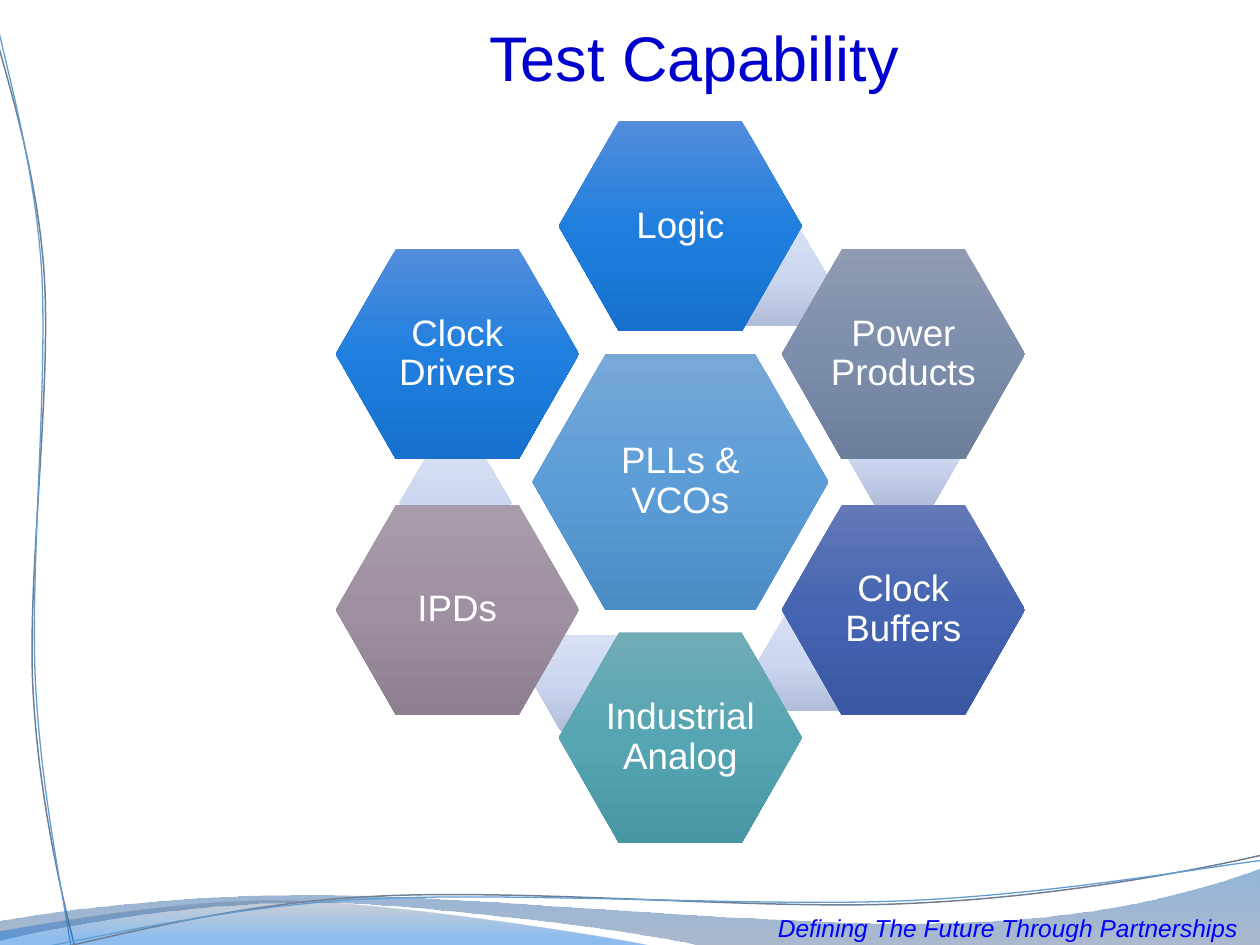
"""Build the Test Capability slide: a ring of hexagons above a waved footer."""
from lxml import etree
from pptx import Presentation, util as u
from pptx.dml.color import RGBColor
from pptx.enum import shapes, text
from pptx.oxml import ns

WHITE = RGBColor(0xFF, 0xFF, 0xFF)
TITLE_BLUE = RGBColor(0x00, 0x00, 0xCC)
FOOTER_BLUE = RGBColor(0x00, 0x00, 0xFF)
SLATE = RGBColor(0x70, 0x7E, 0x95)
SKY = RGBColor(0x62, 0x9D, 0xD1)
WAVE_TOP, WAVE_LOW = RGBColor(0x12, 0x5E, 0xAA), RGBColor(0x69, 0x7F, 0xA4)
CREST_TOP, CREST_LOW = RGBColor(0x59, 0x69, 0x82), RGBColor(0x06, 0x70, 0xDA)
PALE = [RGBColor(0xD6, 0xDF, 0xF3), RGBColor(0xCB, 0xD7, 0xF1), RGBColor(0xB2, 0xBE, 0xD9)]
AZURE = [RGBColor(0x53, 0x8D, 0xDC), RGBColor(0x20, 0x7F, 0xDE), RGBColor(0x15, 0x71, 0xCD)]
LIGHT = [RGBColor(0x77, 0xA8, 0xD7), RGBColor(0x5C, 0x9D, 0xD7), RGBColor(0x4C, 0x8C, 0xC5)]
STEEL = [RGBColor(0x8E, 0x9B, 0xB2), RGBColor(0x7D, 0x8E, 0xAB), RGBColor(0x6D, 0x7E, 0x9A)]
INDIGO = [RGBColor(0x63, 0x78, 0xB7), RGBColor(0x45, 0x64, 0xB1), RGBColor(0x39, 0x57, 0xA2)]
TEAL = [RGBColor(0x70, 0xAC, 0xB7), RGBColor(0x56, 0xA5, 0xB2), RGBColor(0x48, 0x96, 0xA3)]
MAUVE = [RGBColor(0xA8, 0x9C, 0xAA), RGBColor(0x9E, 0x8F, 0xA1), RGBColor(0x8D, 0x7E, 0x90)]

deck = Presentation()
deck.slide_width, deck.slide_height = u.Inches(10), u.Inches(7.5)
UNIT = deck.slide_width // 1000
page = deck.slides.add_slide(deck.slide_layouts[5])


def fill_gradient(shape, stops):
    """Fill downwards with (position, colour, opacity) stops given in percent."""
    shape.fill.gradient()
    shape.fill.gradient_angle = 270
    stop_list = shape.element.find(".//" + ns.qn("a:gsLst"))
    stop_list.clear()
    for position, colour, opacity in stops:
        stop = etree.SubElement(stop_list, ns.qn("a:gs"), pos=str(position * 1000))
        shade = etree.SubElement(stop, ns.qn("a:srgbClr"), val=str(colour))
        if opacity < 100:
            etree.SubElement(shade, ns.qn("a:alpha"), val=str(opacity * 1000))


def add_hexagon(centre_x, centre_y, width, height, inset, colours):
    """Add a borderless hexagon around a centre point on the unit grid."""
    box = page.shapes.add_shape(
        shapes.MSO_SHAPE.HEXAGON, round((centre_x - width / 2) * UNIT),
        round((centre_y - height / 2) * UNIT), width * UNIT, height * UNIT)
    box.adjustments[0] = inset
    box.shadow.inherit = False
    box.line.fill.background()
    fill_gradient(box, [(0, colours[0], 100), (50, colours[1], 100), (100, colours[2], 100)])
    return box


outlines = [
    ("CCC", [(59, 750), (50, 714), (30, 632), (26, 543), (22, 454), (41, 307), (35, 217),
             (29, 127), (0, 47), (-10, 3)], SLATE, 0.85, None),
    ("CCC", [(56, 750), (51, 715), (32, 627), (28, 538), (24, 449), (38, 303), (33, 214),
             (27, 124), (2, 45), (-6, 1)], SKY, 0.75, None),
    ("LCCLCCCL", [(999, 751), (559, 751), (524, 741), (336, 716), (241, 716), (146, 716),
                  (41, 736), (-1, 746), (-2, 731), (16, 727), (130, 709), (253, 710),
                  (377, 710), (618, 735), (742, 732), (870, 731), (953, 706), (1000, 689),
                  (999, 751)], None, 0, [(0, WAVE_TOP, 45), (100, WAVE_LOW, 55)]),
    ("CCLL", [(520, 751), (490, 744), (317, 717), (231, 715), (144, 713), (38, 733),
              (-1, 739), (-1, 750), (520, 751)], None, 0,
     [(0, CREST_TOP, 30), (80, CREST_LOW, 45)]),
    ("CCC", [(1000, 679), (952, 690), (841, 712), (722, 717), (604, 723), (408, 704),
             (287, 712), (167, 719), (60, 752), (1, 762)], SLATE, 0.85, None),
    ("CCC", [(1000, 683), (952, 689), (835, 710), (716, 715), (596, 720), (403, 707),
             (283, 714), (164, 721), (58, 749), (-1, 758)], SKY, 0.75, None),
]
for segments, points, line_colour, line_width, stops in outlines:
    builder = page.shapes.build_freeform(*points[0], scale=UNIT)
    builder.add_line_segments(points[1:], close=stops is not None)
    wave = builder.convert_to_shape()
    wave.shadow.inherit = False
    steps = iter(wave.element.findall(".//" + ns.qn("a:lnTo")))
    for segment in segments:
        step = next(steps)
        if segment == "C":
            step_parent = step.getparent()
            curve = etree.Element(ns.qn("a:cubicBezTo"))
            step_parent.replace(step, curve)
            for corner in (step, next(steps), next(steps)):
                curve.append(corner[0])
                if corner.getparent() is not None:
                    step_parent.remove(corner)
    if stops:
        fill_gradient(wave, stops)
        wave.line.fill.background()
    else:
        wave.fill.background()
        wave.line.color.rgb = line_colour
        wave.line.width = u.Pt(line_width)

footer = page.shapes.add_textbox(522 * UNIT, 720 * UNIT, 556 * UNIT, 18 * UNIT)
footer.text_frame.text = "Defining The Future Through Partnerships"
title = page.shapes.title
title.left, title.top, title.width, title.height = (n * UNIT for n in (205, 9, 692, 71))
title.text_frame.text = "Test Capability"
title.text_frame.vertical_anchor = text.MSO_ANCHOR.MIDDLE
labels = [(footer, 14, FOOTER_BLUE), (title, 36, TITLE_BLUE)]

CENTRE_X, CENTRE_Y, COLUMN, ROW = 540, 382.5, 177, 101.5
core = add_hexagon(CENTRE_X, CENTRE_Y, 235, 203, 0.286, LIGHT)
core.text_frame.text = "PLLs & VCOs"
hexagons = [core]
ring = [
    ("Logic", 0, -2, AZURE, (613.5, 221)),
    ("Power Products", 1, -1, STEEL, (717.5, 364)),
    ("Clock Buffers", 1, 1, INDIGO, (645.5, 526)),
    ("Industrial Analog", 0, 2, TEAL, (467.5, 542)),
    ("IPDs", -1, 1, MAUVE, (361.5, 399)),
    ("Clock Drivers", -1, -1, AZURE, None),
]
for name, column, row, colours, link in ring:
    if link:
        add_hexagon(*link, 89, 76, 0.289, PALE)
    hexagon = add_hexagon(CENTRE_X + column * COLUMN, CENTRE_Y + row * ROW,
                          193, 167, 0.286, colours)
    hexagon.text_frame.text = name
    hexagons.append(hexagon)

for hexagon in hexagons:
    frame = hexagon.text_frame
    frame.word_wrap = True
    frame.vertical_anchor = text.MSO_ANCHOR.MIDDLE
    frame.margin_left = frame.margin_right = frame.margin_top = frame.margin_bottom = 3 * UNIT
    frame.paragraphs[0].line_spacing = 0.9
    labels.append((hexagon, 21, WHITE))

for box, size, colour in labels:
    box.text_frame.word_wrap = True
    para = box.text_frame.paragraphs[0]
    para.alignment = text.PP_ALIGN.CENTER
    span = para.runs[0]
    span.font.name, span.font.size = "Arial", u.Pt(size)
    span.font.color.rgb = colour
    span.font.italic = box is footer

deck.save("out.pptx")
